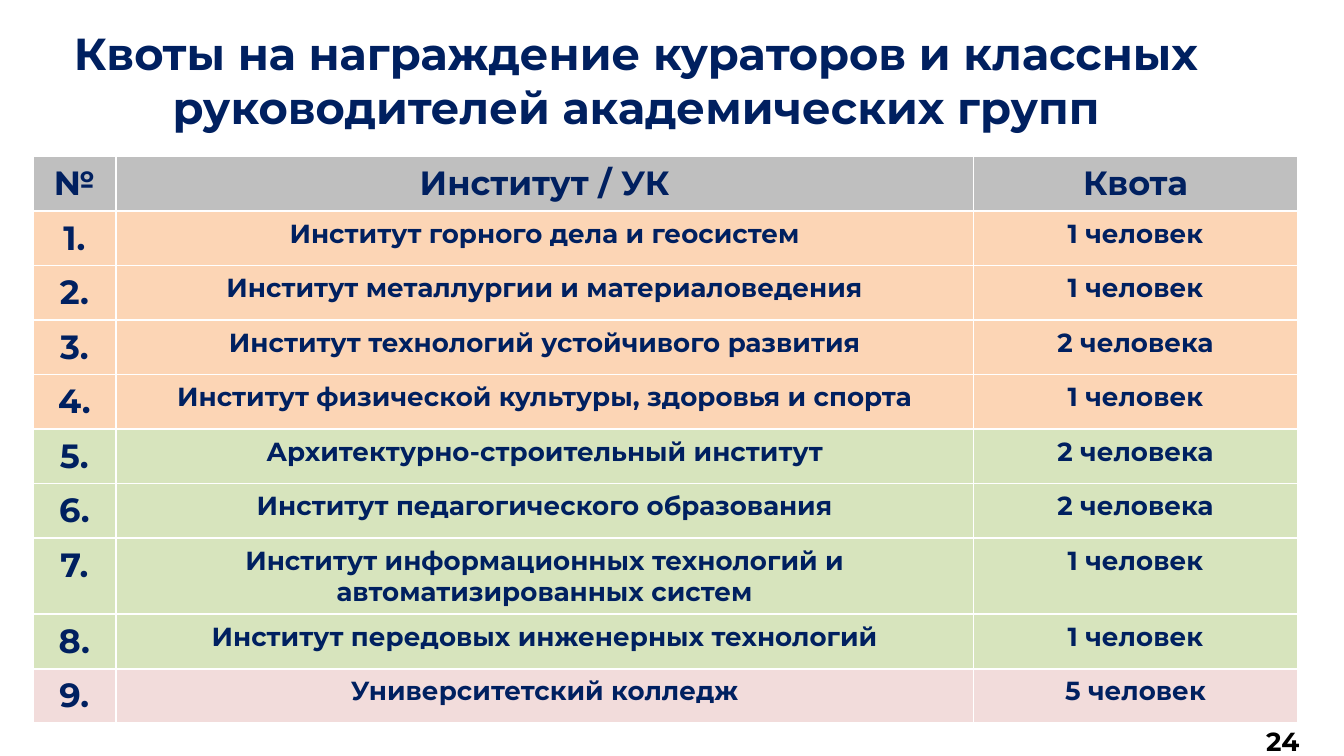
from pptx import Presentation
from pptx.dml.color import RGBColor
from pptx.enum.text import MSO_AUTO_SIZE, PP_ALIGN
from pptx.util import Cm, Pt

NAVY = RGBColor(0x00, 0x20, 0x60)
BLACK = RGBColor(0x00, 0x00, 0x00)
GRAY = RGBColor(0xBF, 0xBF, 0xBF)
PEACH = RGBColor(0xFC, 0xD5, 0xB5)
GREEN = RGBColor(0xD7, 0xE4, 0xBD)
PINK = RGBColor(0xF2, 0xDC, 0xDB)
FONT = "Montserrat"

TITLE = "Квоты на награждение кураторов и классных руководителей академических групп"
PAGE_NUMBER = "24"
HEADER = ("№", "Институт / УК", "Квота")
GROUPS = [
    (PEACH, [
        ("Институт горного дела и геосистем", "1 человек"),
        ("Институт металлургии и материаловедения", "1 человек"),
        ("Институт технологий устойчивого развития", "2 человека"),
        ("Институт физической культуры, здоровья и спорта", "1 человек"),
    ]),
    (GREEN, [
        ("Архитектурно-строительный институт", "2 человека"),
        ("Институт педагогического образования", "2 человека"),
        ("Институт информационных технологий и автоматизированных систем", "1 человек"),
        ("Институт передовых инженерных технологий", "1 человек"),
    ]),
    (PINK, [("Университетский колледж", "5 человек")]),
]
COLUMN_WIDTHS = (1.57, 16.21, 6.12)
ROW_HEIGHT = 1.03


def write(frame, text, size, color=NAVY):
    frame.text = text
    paragraph = frame.paragraphs[0]
    paragraph.alignment = PP_ALIGN.CENTER
    font = paragraph.runs[0].font
    font.name = FONT
    font.size = Pt(size)
    font.bold = True
    font.color.rgb = color


def add_text(page, text, place, size, color=NAVY):
    box = page.shapes.add_textbox(*[Cm(length) for length in place])
    box.text_frame.word_wrap = True
    write(box.text_frame, text, size, color)
    return box


def add_quota_table(page):
    rows = [(GRAY, HEADER, (18, 18, 18))]
    for fill, entries in GROUPS:
        for institute, quota in entries:
            rows.append((fill, (f"{len(rows)}.", institute, quota), (18, 14, 14)))

    table = page.shapes.add_table(
        len(rows), len(HEADER), Cm(0.62), Cm(2.96),
        Cm(sum(COLUMN_WIDTHS)), Cm(ROW_HEIGHT * len(rows)),
    ).table
    for column, width in zip(table.columns, COLUMN_WIDTHS):
        column.width = Cm(width)
    for row, (fill, texts, sizes) in zip(table.rows, rows):
        row.height = Cm(ROW_HEIGHT)
        for cell, text, size in zip(row.cells, texts, sizes):
            cell.fill.solid()
            cell.fill.fore_color.rgb = fill
            write(cell.text_frame, text, size)


def main():
    deck = Presentation()
    deck.slide_width = Cm(25.4)
    deck.slide_height = Cm(14.29)
    page = deck.slides.add_slide(deck.slide_layouts[6])
    title = add_text(page, TITLE, (0.62, 0.36, 22.8, 2.31), 24)
    title.text_frame.auto_size = MSO_AUTO_SIZE.SHAPE_TO_FIT_TEXT
    add_text(page, PAGE_NUMBER, (23.09, 13.59, 2.31, 0.74), 14, BLACK)
    add_quota_table(page)
    deck.save("out.pptx")


if __name__ == "__main__":
    main()
